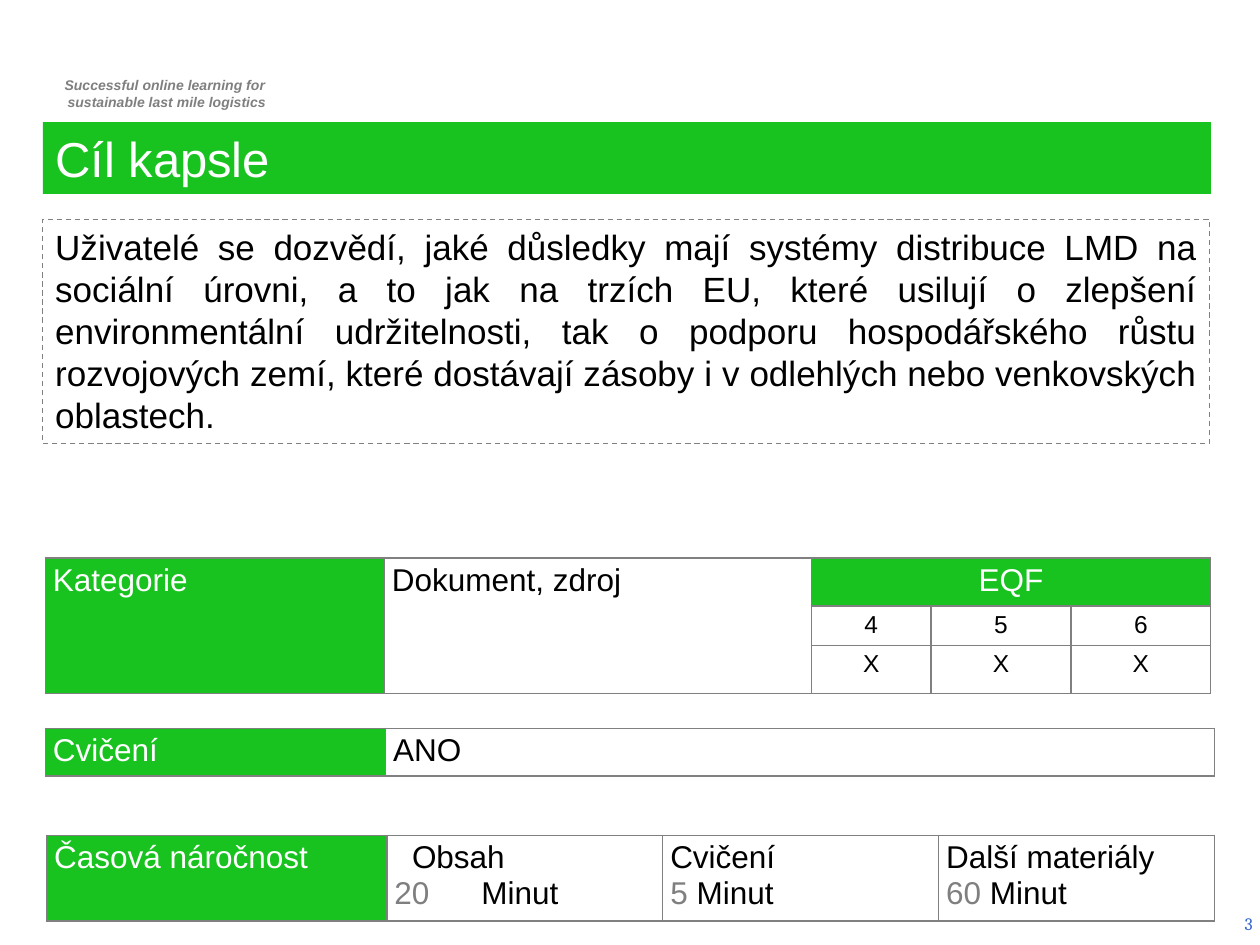
from dataclasses import dataclass
from lxml import etree
from pptx import Presentation
from pptx.dml.color import RGBColor
from pptx.enum import dml, shapes, text
from pptx.oxml import ns
from pptx.util import Inches, Pt


@dataclass
class Theme:
    green: str = "18C320"
    gray: str = "808080"
    soft: str = "7F7F7F"
    blue: str = "3366CC"
    white: str = "FFFFFF"
    black: str = "000000"
    font: str = "Arial"
    serif: str = "Cambria"
    tiny: int = 8
    page: int = 10
    small: int = 14
    label: int = 18
    body: int = 20
    title: int = 28


look = Theme()
deck = Presentation()
deck.slide_width, deck.slide_height = Inches(10), Inches(7.5)
slide = deck.slides.add_slide(deck.slide_layouts[6])
col = deck.slide_width // 1000
row = deck.slide_height // 750
left, mid, right, both = (text.PP_ALIGN.LEFT, text.PP_ALIGN.CENTER,
                          text.PP_ALIGN.RIGHT, text.PP_ALIGN.JUSTIFY)


def write(frame, lines, size, align, face=look.font, slant=None):
    frame.word_wrap = True
    for i, line in enumerate(lines):
        para = frame.paragraphs[0] if i == 0 else frame.add_paragraph()
        para.alignment = align
        for words, color in line:
            run = para.add_run()
            run.text = words
            font = run.font
            font.name, font.size = face, Pt(size)
            font.bold = font.italic = slant
            font.color.rgb = RGBColor.from_string(color)


def grid(x, y, cols, rows, cells):
    box = slide.shapes.add_table(len(rows), len(cols), x * col, y * row,
                                 sum(cols) * col, sum(rows) * row)
    table = box.table
    table.first_row = table.horz_banding = False
    for i, wide in enumerate(cols):
        table.columns[i].width = wide * col
    for i, high in enumerate(rows):
        table.rows[i].height = high * row
    for cell in table.iter_cells():
        cell.margin_left = cell.margin_right = 6 * col
        cell.margin_top = cell.margin_bottom = 4 * row
        for side in ("a:lnL", "a:lnR", "a:lnT", "a:lnB"):
            edge = etree.SubElement(cell._tc.get_or_add_tcPr(), ns.qn(side), w=str(Pt(1)))
            ink = etree.SubElement(edge, ns.qn("a:solidFill"))
            etree.SubElement(ink, ns.qn("a:srgbClr"), val=look.gray)
        cell.fill.background()
    for r, c, down, over, lines, size, align, fill in cells:
        cell = table.cell(r, c)
        if down + over > 2:
            cell.merge(table.cell(r + down - 1, c + over - 1))
        if fill:
            cell.fill.solid()
            cell.fill.fore_color.rgb = RGBColor.from_string(fill)
        write(cell.text_frame, lines, size, align)
    return table


motto = slide.shapes.add_textbox(29 * col, 56 * row, 203 * col, 37 * row)
write(motto.text_frame, [[("Successful online learning for ", look.soft)],
                         [("sustainable last mile logistics", look.soft)]],
      look.tiny, mid, slant=True)
for para in motto.text_frame.paragraphs:
    para._p.get_or_add_pPr().set("marL", str(4 * col))

page = slide.shapes.add_textbox(771 * col, 713 * row, 233 * col, 40 * row)
page.text_frame.vertical_anchor = text.MSO_ANCHOR.MIDDLE
write(page.text_frame, [[("3", look.blue)]], look.page, right, look.serif)

goal = ("Uživatelé se dozvědí, jaké důsledky mají systémy distribuce LMD na sociální úrovni, "
        "a to jak na trzích EU, které usilují o zlepšení environmentální udržitelnosti, "
        "tak o podporu hospodářského růstu rozvojových zemí, které dostávají zásoby "
        "i v odlehlých nebo venkovských oblastech.")
for y, wide, high, words, color, size, align, fill in (
        (97, 927, 57, "Cíl kapsle", look.white, look.title, left, look.green),
        (174, 926, 178, goal, look.black, look.body, both, None)):
    box = slide.shapes.add_shape(shapes.MSO_SHAPE.RECTANGLE, 34 * col, y * row,
                                 wide * col, high * row)
    box.shadow.inherit = False
    if fill:
        box.fill.solid()
        box.fill.fore_color.rgb = RGBColor.from_string(fill)
        box.line.fill.background()
    else:
        box.fill.background()
        box.line.color.rgb = RGBColor.from_string(look.gray)
        box.line.width = Pt(0.75)
        box.line.dash_style = dml.MSO_LINE.DASH
    box.text_frame.vertical_anchor = text.MSO_ANCHOR.TOP
    write(box.text_frame, [[(words, color)]], size, align)

cells = [
    (0, 0, 3, 1, [[("Kategorie", look.white)]], look.label, both, look.green),
    (0, 1, 3, 1, [[("Dokument, zdroj", look.black)]], look.label, both, None),
    (0, 2, 1, 3, [[("EQF", look.white)]], look.label, mid, look.green)]
for i, level in enumerate("456"):
    for r, mark in ((1, level), (2, "X")):
        cells.append((r, 2 + i, 1, 1, [[(mark, look.black)]], look.small, mid, None))
grid(36, 443, (269, 339, 95, 111, 111), (37, 31, 37), cells)

grid(36, 578, (270, 658), (37,), [
    (0, 0, 1, 1, [[("Cvičení", look.white)]], look.label, both, look.green),
    (0, 1, 1, 1, [[("ANO", look.black)]], look.label, both, None)])

cells = [(0, 0, 1, 1, [[("Časová náročnost", look.white)]], look.label, both, look.green)]
for i, (name, count, gap) in enumerate((("Obsah", "20", "\t"), ("Cvičení", "5", " "),
                                        ("Další materiály", "60", " "))):
    lines = [[(name, look.black)], [(count, look.soft), (gap + "Minut", look.black)]]
    cells.append((0, i + 1, 1, 1, lines, look.label, left, None))
time = grid(37, 663, (270, 219, 219, 219), (67,), cells)
head, span = time.cell(0, 1).text_frame.paragraphs
head._p.get_or_add_pPr().set("marL", str(14 * col))
tabs = etree.SubElement(span._p.get_or_add_pPr(), ns.qn("a:tabLst"))
etree.SubElement(tabs, ns.qn("a:tab"), pos=str(69 * col), algn="l")

deck.save("out.pptx")
